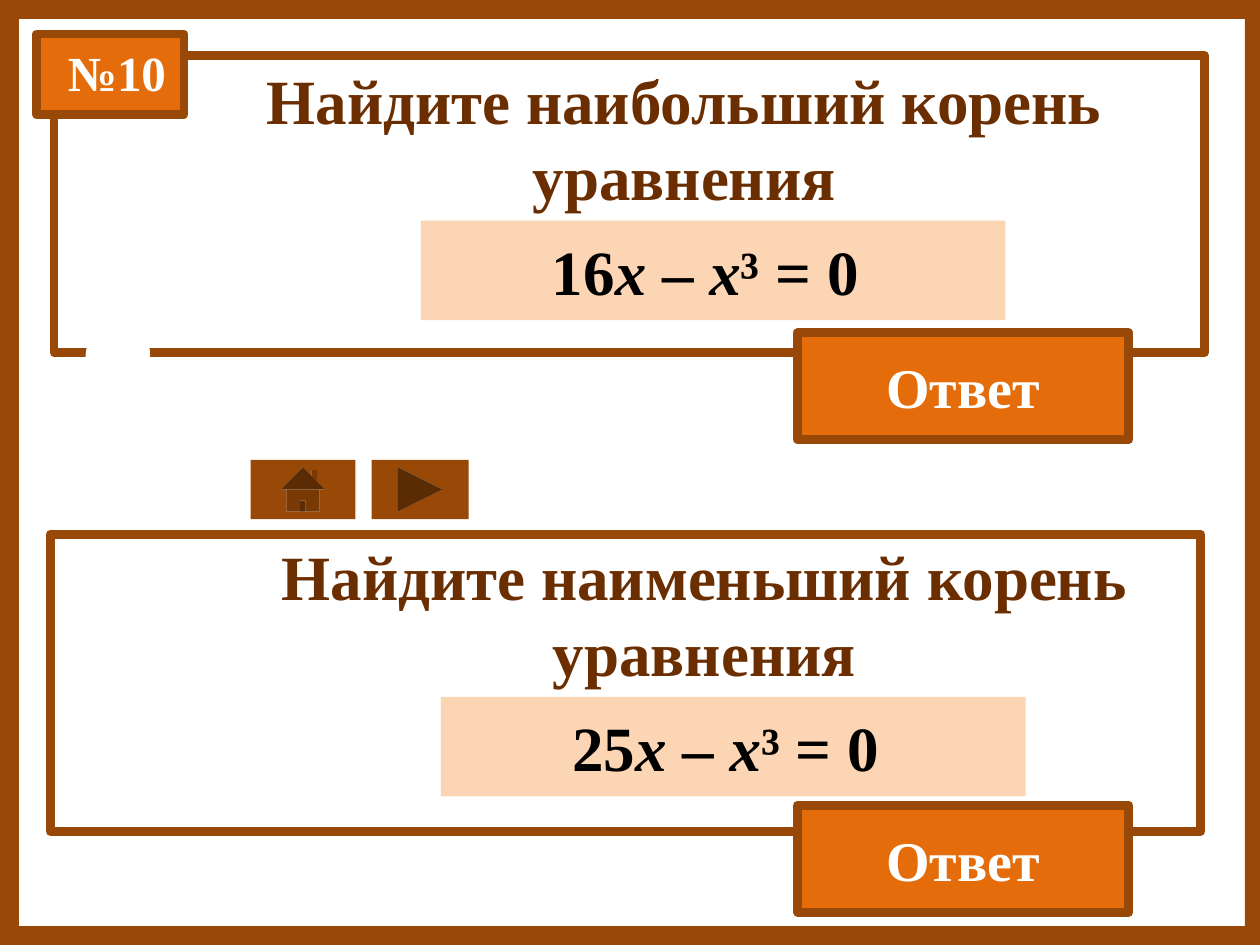
from dataclasses import dataclass

from pptx import Presentation
from pptx.dml.color import RGBColor
from pptx.enum.shapes import MSO_SHAPE
from pptx.enum.text import MSO_ANCHOR, MSO_AUTO_SIZE, PP_ALIGN
from pptx.util import Inches, Pt


@dataclass(frozen=True)
class Theme:
    font: str = "Times New Roman"
    brown: str = "984807"
    orange: str = "E46C0A"
    peach: str = "FCD5B5"
    heading: str = "6B2E01"
    white: str = "FFFFFF"
    black: str = "000000"
    number_size: int = 28
    answer_size: int = 32
    question_size: int = 36
    border: int = 5


theme = Theme()
deck = Presentation()
deck.slide_width = Inches(10)
deck.slide_height = Inches(7.5)
page = deck.slides.add_slide(deck.slide_layouts[5])
shapes = page.shapes


def add_block(kind, left, top, width, height, fill, bordered=False):
    block = shapes.add_shape(kind, Inches(left), Inches(top), Inches(width), Inches(height))
    block.shadow.inherit = False
    block.fill.solid()
    block.fill.fore_color.rgb = RGBColor.from_string(fill)
    if bordered:
        block.line.color.rgb = RGBColor.from_string(theme.brown)
        block.line.width = Pt(theme.border)
    else:
        block.line.fill.background()
    return block


def write_text(box, text, size, color, italic="", align=PP_ALIGN.CENTER,
               anchor=MSO_ANCHOR.MIDDLE, wrap=True):
    frame = box.text_frame
    frame.word_wrap = wrap
    frame.auto_size = MSO_AUTO_SIZE.NONE
    frame.vertical_anchor = anchor
    para = frame.paragraphs[0]
    para.alignment = align
    pieces = text.split("|")
    for piece in pieces:
        span = para.add_run()
        span.text = piece
        span.font.name = theme.font
        span.font.size = Pt(size)
        span.font.bold = True
        span.font.italic = bool(italic) and piece.strip() == italic
        span.font.color.rgb = RGBColor.from_string(color)


border_frame = add_block(MSO_SHAPE.FRAME, 0, 0, 10.03, 7.5, theme.brown)
border_frame.adjustments[0] = 0.02

for left, top in [(0.43, 0.44), (0.4, 4.24)]:
    add_block(MSO_SHAPE.RECTANGLE, left, top, 9.13, 2.36, theme.white, bordered=True)

add_block(MSO_SHAPE.RECTANGLE, 0.29, 0.27, 1.17, 0.64, theme.orange, bordered=True)
number_box = shapes.add_textbox(Inches(0.44), Inches(0.29), Inches(0.99), Inches(0.57))
write_text(number_box, "№10", theme.number_size, theme.white,
           align=PP_ALIGN.LEFT, anchor=MSO_ANCHOR.TOP, wrap=False)

border_gap = add_block(MSO_SHAPE.OVAL, 0.68, 2.55, 0.51, 0.55, theme.white)
border_gap.rotation = 14.6

title = shapes.title
title.element.getparent().append(title.element)
second_heading = shapes.add_textbox(0, 0, Inches(1), Inches(1))

questions = [
    (title, "Найдите наибольший корень уравнения", 1.61, 0.44, "16|х |– |х|³ = 0 ", 3.34, 1.75, 2.64),
    (second_heading, "Найдите наименьший корень уравнения", 1.77, 4.22, "25|х |– |х|³ = 0 ", 3.5, 5.53, 6.39),
]
for (heading, wording, heading_left, heading_top,
     equation, equation_left, equation_top, answer_top) in questions:
    heading.left, heading.top = Inches(heading_left), Inches(heading_top)
    heading.width, heading.height = Inches(7.64), Inches(1.31)
    write_text(heading, wording, theme.question_size, theme.heading, anchor=MSO_ANCHOR.TOP)
    equation_box = add_block(MSO_SHAPE.RECTANGLE, equation_left, equation_top, 4.64, 0.79, theme.peach)
    write_text(equation_box, equation, theme.question_size, theme.black, italic="х")
    answer = add_block(MSO_SHAPE.RECTANGLE, 6.33, answer_top, 2.63, 0.85, theme.orange, bordered=True)
    write_text(answer, "Ответ", theme.answer_size, theme.white)

add_block(MSO_SHAPE.ACTION_BUTTON_HOME, 1.99, 3.65, 0.83, 0.47, theme.brown)
add_block(MSO_SHAPE.ACTION_BUTTON_FORWARD_OR_NEXT, 2.95, 3.65, 0.77, 0.47, theme.brown)

deck.save("out.pptx")
